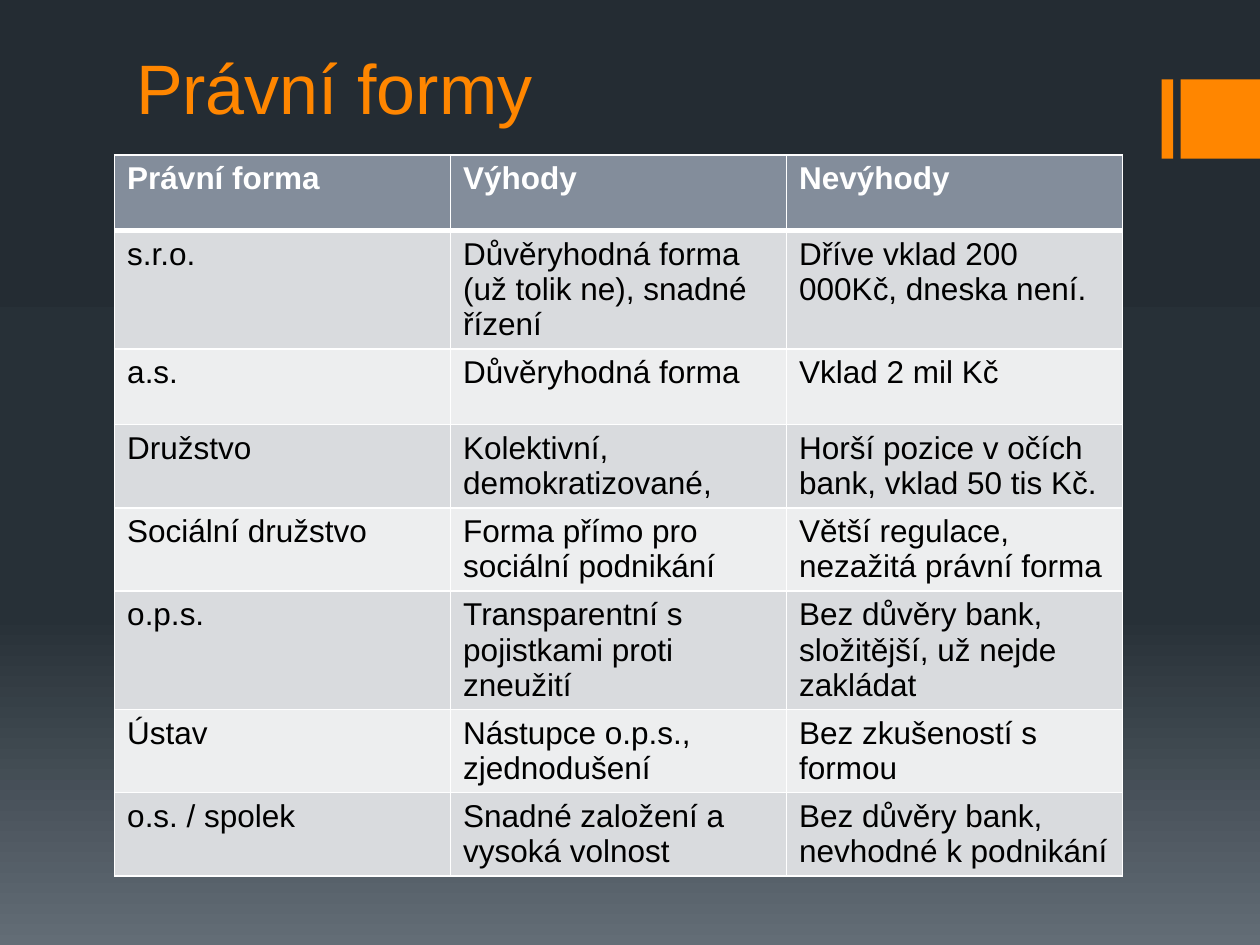
from lxml.etree import SubElement
from pptx import Presentation
from pptx.dml.color import RGBColor
from pptx.enum.shapes import MSO_SHAPE
from pptx.enum.text import MSO_ANCHOR, MSO_AUTO_SIZE, PP_ALIGN
from pptx.oxml import parse_xml
from pptx.oxml.ns import nsdecls, qn
from pptx.util import Inches, Pt

ORANGE = RGBColor(0xFF, 0x86, 0x00)
WHITE = RGBColor(0xFF, 0xFF, 0xFF)
BLACK = RGBColor(0x00, 0x00, 0x00)
HEADER_GREY = RGBColor(0x83, 0x8D, 0x9B)
BAND_GREYS = (RGBColor(0xED, 0xEE, 0xEF), RGBColor(0xD9, 0xDB, 0xDE))
BACKGROUND_STOPS = (
    (0, RGBColor(0x24, 0x2C, 0x33)),
    (65, RGBColor(0x27, 0x30, 0x37)),
    (100, RGBColor(0x63, 0x6D, 0x76)),
)
FONT = "Arial"

LEGAL_FORMS = (
    ("Právní forma", "Výhody", "Nevýhody"),
    ("s.r.o.", "Důvěryhodná forma (už tolik ne), snadné řízení",
     "Dříve vklad 200 000Kč, dneska není."),
    ("a.s.", "Důvěryhodná forma", "Vklad 2 mil Kč"),
    ("Družstvo", "Kolektivní, demokratizované,",
     "Horší pozice v očích bank, vklad 50 tis Kč."),
    ("Sociální družstvo", "Forma přímo pro sociální podnikání",
     "Větší regulace, nezažitá právní forma"),
    ("o.p.s.", "Transparentní s pojistkami proti zneužití",
     "Bez důvěry bank, složitější, už nejde zakládat"),
    ("Ústav", "Nástupce o.p.s., zjednodušení", "Bez zkušeností s formou"),
    ("o.s. / spolek", "Snadné založení a vysoká volnost",
     "Bez důvěry bank, nevhodné k podnikání"),
)


def write_text(text_frame, text, size, color, bold=False):
    paragraph = text_frame.paragraphs[0]
    paragraph.alignment = PP_ALIGN.LEFT
    run = paragraph.add_run()
    run.text = text
    run.font.name = FONT
    run.font.size = Pt(size)
    run.font.bold = bold
    run.font.color.rgb = color


def paint_background(slide):
    """Fill the slide with a three-stop gradient running downwards."""
    fill = slide.background.fill
    fill.gradient()
    fill.gradient_angle = 270
    stop_list = slide.background._cSld.find(".//" + qn("a:gsLst"))
    for stop in list(stop_list):
        stop_list.remove(stop)
    for position, color in BACKGROUND_STOPS:
        stop = SubElement(stop_list, qn("a:gs"), pos=str(position * 1000))
        SubElement(stop, qn("a:srgbClr"), val=str(color))


def add_edge_marker(slide, left, top, width, height):
    """Place a thin bar and a square, flush with the right of the box."""
    bar_width = Inches(0.09)
    for x, part_width in ((left, bar_width), (left + width - height, height)):
        shape = slide.shapes.add_shape(
            MSO_SHAPE.RECTANGLE, x, top, part_width, height)
        shape.shadow.inherit = False
        shape.fill.solid()
        shape.fill.fore_color.rgb = ORANGE
        shape.line.fill.background()


def place_title(slide, text, left, top, width, height):
    title = slide.shapes.title
    title.left, title.top, title.width, title.height = left, top, width, height
    title.text_frame.auto_size = MSO_AUTO_SIZE.NONE
    title.text_frame.vertical_anchor = MSO_ANCHOR.BOTTOM
    write_text(title.text_frame, text, 40, ORANGE)


def set_borders(cell, top=1, bottom=1):
    """Draw white borders; the line elements must precede the cell fill."""
    properties = cell._tc.get_or_add_tcPr()
    widths = {"lnL": 1, "lnR": 1, "lnT": top, "lnB": bottom}
    for index, (tag, width) in enumerate(widths.items()):
        properties.insert(index, parse_xml(
            f'<a:{tag} {nsdecls("a")} w="{Pt(width)}"><a:solidFill>'
            f'<a:srgbClr val="{WHITE}"/></a:solidFill></a:{tag}>'))


def add_forms_table(slide, rows, left, top, width, height):
    table = slide.shapes.add_table(
        len(rows), len(rows[0]), left, top, width, height).table
    for row_index, row in enumerate(rows):
        is_header = row_index == 0
        for column_index, text in enumerate(row):
            cell = table.cell(row_index, column_index)
            cell.fill.solid()
            cell.fill.fore_color.rgb = (
                HEADER_GREY if is_header else BAND_GREYS[row_index % 2])
            set_borders(cell, top=3 if row_index == 1 else 1,
                        bottom=3 if is_header else 1)
            write_text(cell.text_frame, text, 18,
                       WHITE if is_header else BLACK, bold=is_header)


def main():
    presentation = Presentation()
    presentation.slide_width = Inches(10)
    presentation.slide_height = Inches(7.5)
    slide = presentation.slides.add_slide(presentation.slide_layouts[5])
    paint_background(slide)
    add_edge_marker(slide, Inches(9.22), Inches(0.63), Inches(0.78), Inches(0.63))
    place_title(slide, "Právní formy",
                Inches(0.98), Inches(-0.19), Inches(8), Inches(1.26))
    add_forms_table(slide, LEGAL_FORMS,
                    Inches(0.91), Inches(1.23), Inches(8), Inches(4.8))
    presentation.save("out.pptx")


if __name__ == "__main__":
    main()
